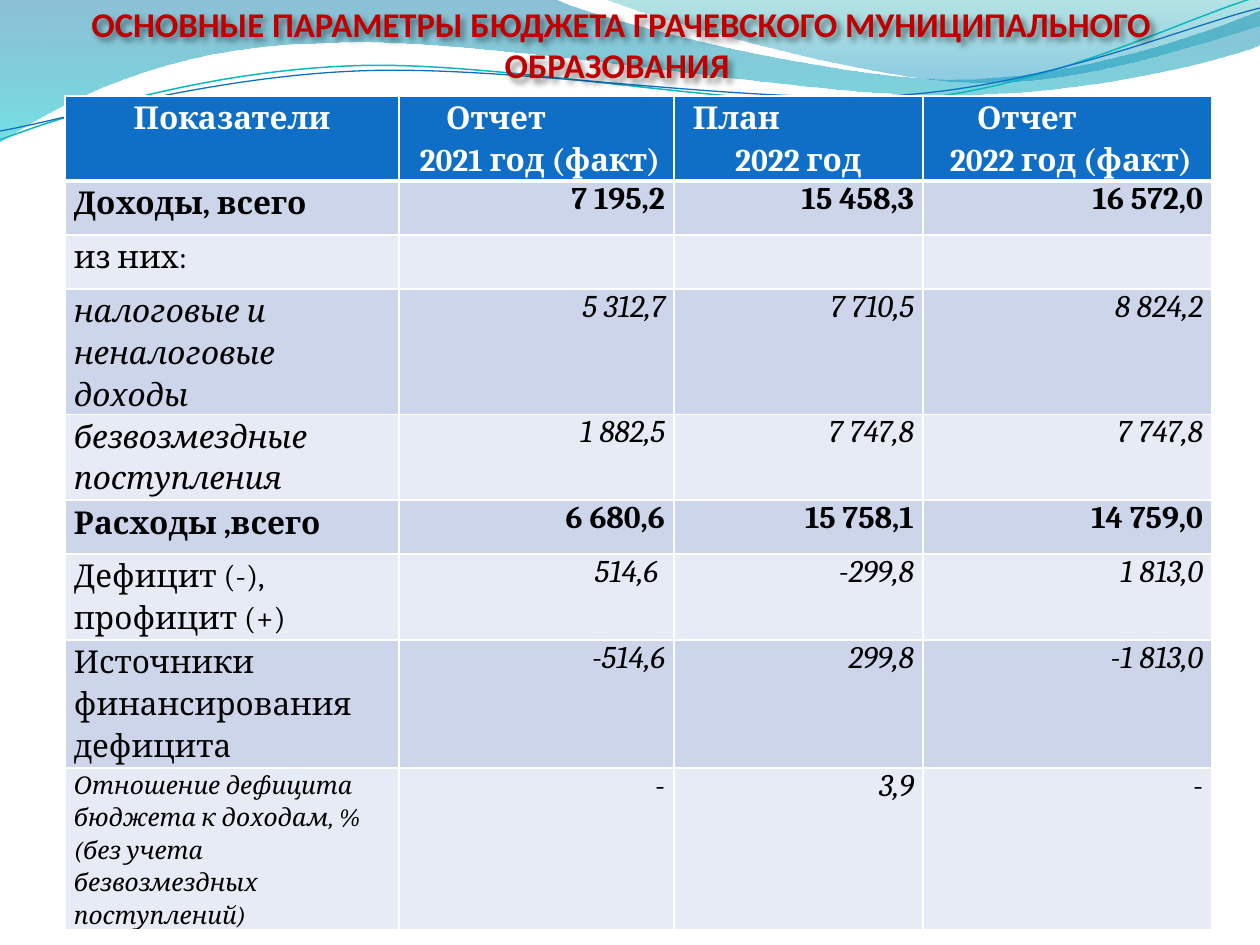
from math import cos, radians, sin

from pptx import Presentation
from pptx.dml.color import RGBColor
from pptx.enum.text import MSO_ANCHOR, MSO_AUTO_SIZE, PP_ALIGN
from pptx.oxml import parse_xml
from pptx.oxml.ns import nsdecls, qn
from pptx.oxml.xmlchemy import OxmlElement
from pptx.util import Emu, Pt

EMU_PER_PX = 914400 / 126


def px(n):
    return Emu(round(n * EMU_PER_PX))


def rgb(value):
    return RGBColor.from_string(value)


def turn(point, center, degrees):
    """The point turned clockwise about the center."""
    dx, dy = point[0] - center[0], point[1] - center[1]
    c, s = cos(radians(degrees)), sin(radians(degrees))
    return center[0] + dx * c - dy * s, center[1] + dx * s + dy * c


class Deck:
    title_font = {"name": "Calibri", "size": Pt(19.8), "bold": True}
    table_font = {"name": "Cambria", "size": Pt(18), "bold": False, "italic": False}
    title_color, text_color = "C00000", "000000"
    header_fill, header_text = "0F6FC6", "FFFFFF"
    bands = ["CCD5EA", "E7EBF5"]

    def __init__(self, prs):
        self.prs = prs
        self.slide = prs.slides.add_slide(prs.slide_layouts[5])

    def style(self, r, color, formats):
        for name, value in formats.items():
            setattr(r.font, name, value)
        r.font.color.rgb = rgb(color)

    def outline(self, start, steps, closed):
        """A step holds one point for a line or three for a curve."""
        points = [point for step in steps for point in step]
        fb = self.slide.shapes.build_freeform(*map(px, start), scale=1.0)
        fb.add_line_segments([tuple(map(px, p)) for p in points], close=closed)
        sp = fb.convert_to_shape()
        sp.shadow.inherit = False
        # Join each three points into one cubic curve
        lines = iter(list(sp._element.iter(qn("a:lnTo"))))
        for step in steps:
            group = [next(lines) for _ in step]
            if len(group) == 3:
                cubic = OxmlElement("a:cubicBezTo")
                group[0].addprevious(cubic)
                for line in group:
                    cubic.append(line[0])
                    line.getparent().remove(line)
        return sp

    def wave(self, start, steps, stops):
        sp = self.outline(start, steps, True)
        sp.line.fill.background()
        sp.fill.gradient()
        sp.fill.gradient_angle = 270
        for stop, (color, alpha) in zip(sp.fill.gradient_stops, stops):
            stop.color.rgb = rgb(color)
            tag = OxmlElement("a:alpha")
            tag.set("val", str(alpha * 1000))
            stop._gs.find(qn("a:srgbClr")).append(tag)

    def curve(self, start, steps, color, width, center, tilt=2.7):
        level = [[turn(p, center, tilt) for p in step] for step in steps]
        sp = self.outline(turn(start, center, tilt), level, False)
        sp.rotation = 360 - tilt
        sp.fill.background()
        sp.line.color.rgb = rgb(color)
        sp.line.width = Pt(width)

    def title(self, text, x, y, w, h):
        sp = self.slide.shapes.title
        sp._element.getparent().append(sp._element)  # in front of the waves
        sp.left, sp.top, sp.width, sp.height = map(px, (x, y, w, h))
        tf = sp.text_frame
        formats = {"word_wrap": True, "auto_size": MSO_AUTO_SIZE.NONE,
                   "vertical_anchor": MSO_ANCHOR.BOTTOM, "margin_left": 0,
                   "margin_right": 0, "margin_top": 0, "margin_bottom": 0}
        for name, value in formats.items():
            setattr(tf, name, value)
        p = tf.paragraphs[0]
        p.alignment = PP_ALIGN.CENTER
        r = p.add_run()
        r.text = text
        self.style(r, self.title_color, self.title_font)
        sp._element.spPr.append(parse_xml(
            f'<a:effectLst {nsdecls("a")}><a:outerShdw blurRad="38100" dist="38100" '
            'dir="2700000" algn="tl"><a:srgbClr val="000000"><a:alpha val="43000"/>'
            '</a:srgbClr></a:outerShdw></a:effectLst>'))

    def table(self, x, y, cols, rows):
        shape = self.slide.shapes.add_table(
            len(rows), len(cols), px(x), px(y), px(sum(cols)), px(sum(rows)))
        for column, width in zip(shape.table.columns, cols):
            column.width = px(width)
        for row, height in zip(shape.table.rows, rows):
            row.height = px(height)
        return shape.table

    def underline(self, cell, color, width):
        cell._tc.get_or_add_tcPr().insert(0, parse_xml(
            f'<a:lnB {nsdecls("a")} w="{Pt(width)}"><a:solidFill>'
            f'<a:srgbClr val="{color}"/></a:solidFill></a:lnB>'))

    def cell(self, cell, lines, fill, color, align, spacing=None, indent=0, **formats):
        cell.margin_left = cell.margin_right = px(9)
        cell.margin_top = cell.margin_bottom = 0
        cell.fill.solid()
        cell.fill.fore_color.rgb = rgb(fill)
        tf = cell.text_frame
        for i, line in enumerate(lines):
            p = tf.add_paragraph() if i else tf.paragraphs[0]
            p.alignment = align
            if spacing:
                p.line_spacing = spacing
            if indent and i == 0:
                p.alignment = PP_ALIGN.LEFT
                p._p.get_or_add_pPr().set("marL", str(px(indent)))
            if line:
                r = p.add_run()
                r.text = line
                self.style(r, color, {**self.table_font, **formats})


# Header cells: lines and the indent of the first line
HEADER = [
    (["Показатели"], 0),
    (["Отчет", " 2021 год (факт)"], 38),
    (["План", "2022 год"], 10),
    (["Отчет", " 2022 год (факт)"], 45),
]
BOLD, ITALIC, SMALL = {"bold": True}, {"italic": True}, {"italic": True, "size": Pt(14)}
# Body rows: label, values, label format, value format
BODY = [
    ("Доходы, всего", ["7 195,2", "15 458,3", "16 572,0"], BOLD, BOLD),
    ("из них:", ["", "", ""], {}, {}),
    ("налоговые и неналоговые доходы", ["5 312,7", "7 710,5", "8 824,2"], ITALIC, ITALIC),
    ("безвозмездные поступления", ["1 882,5", "7 747,8", " 7 747,8"], ITALIC, ITALIC),
    ("Расходы ,всего", ["6 680,6", "15 758,1", "14 759,0"], BOLD, BOLD),
    ("Дефицит (-), профицит (+)", ["514,6 ", "-299,8", "1 813,0"], {}, ITALIC),
    ("Источники финансирования дефицита", ["-514,6", "299,8", "-1 813,0"], {}, ITALIC),
    ("Отношение дефицита бюджета к доходам, % (без учета безвозмездных поступлений)",
     ["-", "3,9", "-"], SMALL, ITALIC),
]


def main():
    prs = Presentation()
    prs.slide_width, prs.slide_height = px(1260), px(945)
    deck = Deck(prs)

    # Waves at the top
    deck.wave((0, 0), [
        [(554, -1)],
        [(600, 21), (837, 79), (955, 79)], [(1075, 79), (1207, 33), (1260, 11)],
        [(1261, 45)],
        [(1239, 55), (1096, 96), (940, 95)], [(784, 95), (481, 35), (324, 43)],
        [(163, 45), (58, 105), (-1, 142)],
    ], [("0074A1", 45), ("00C6CF", 55)])
    deck.wave((604, -1), [
        [(641, 15), (859, 78), (969, 82)], [(1079, 87), (1211, 40), (1260, 26)],
        [(1260, 0)],
    ], [("00A1A9", 30), ("008BBF", 45)])
    deck.curve((0, 140), [
        [(60, 117), (199, 72), (349, 66)], [(498, 59), (747, 112), (898, 101)],
        [(1050, 89), (1182, 19), (1257, -3)],
    ], "0AB8BF", 0.85, (629, 72))
    deck.curve((0, 131), [
        [(59, 121), (207, 77), (357, 71)], [(508, 64), (752, 106), (903, 95)],
        [(1053, 84), (1186, 26), (1260, 8)],
    ], "0F6FC6", 0.75, (629, 74))

    # Title
    deck.title("ОСНОВНЫЕ ПАРАМЕТРЫ БЮДЖЕТА ГРАЧЕВСКОГО МУНИЦИПАЛЬНОГО ОБРАЗОВАНИЯ ",
               54, 2, 1134, 84)

    # Budget table
    table = deck.table(65, 96, [334, 275, 249, 289],
                       [85, 54, 54, 88, 86, 54, 86, 128, 134])
    for col, (lines, indent) in enumerate(HEADER):
        cell = table.cell(0, col)
        deck.cell(cell, lines, deck.header_fill, deck.header_text,
                  PP_ALIGN.CENTER, 1.15, indent, bold=True)
        deck.underline(cell, deck.header_text, 3)
    for row, (label, values, label_format, value_format) in enumerate(BODY, 1):
        fill = deck.bands[(row - 1) % 2]
        deck.cell(table.cell(row, 0), [label], fill, deck.text_color,
                  PP_ALIGN.LEFT, 1.15, **label_format)
        for col, value in enumerate(values, 1):
            deck.cell(table.cell(row, col), [value], fill, deck.text_color,
                      PP_ALIGN.RIGHT, **value_format)

    prs.save("out.pptx")


if __name__ == "__main__":
    main()
